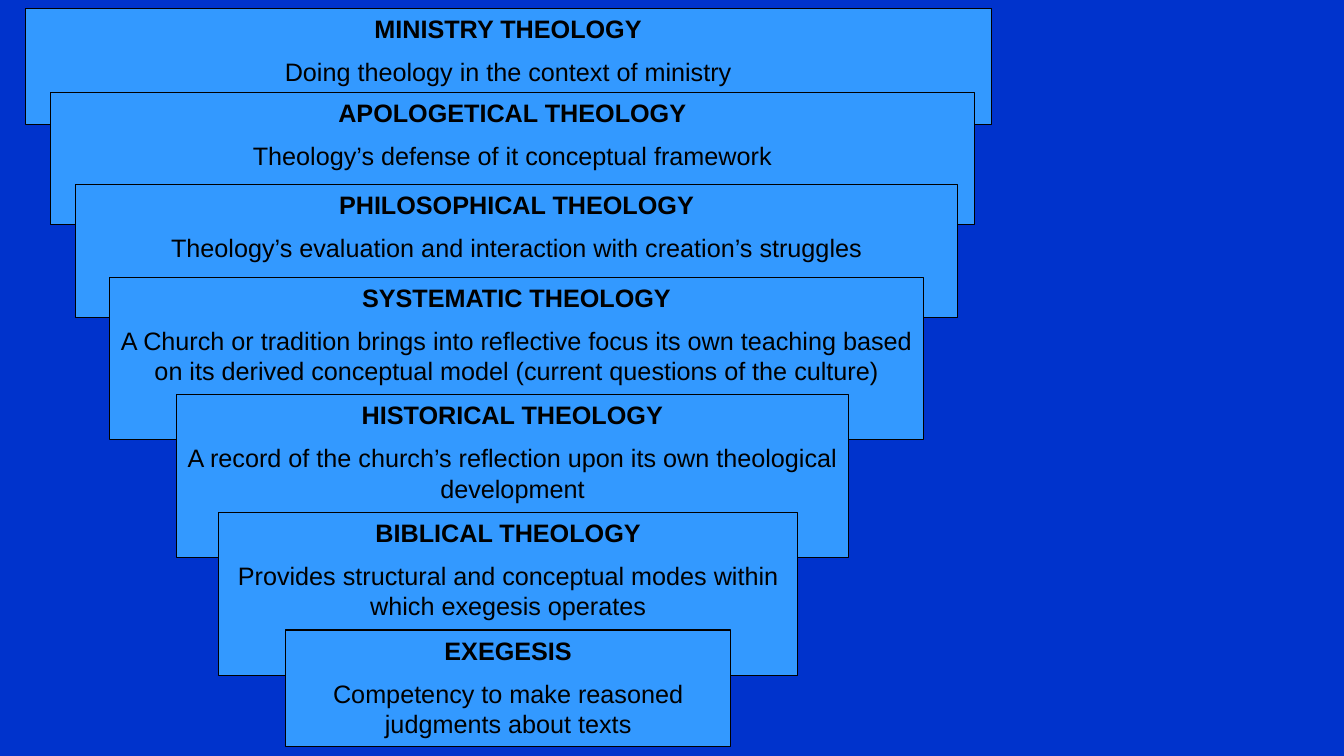
from pptx import Presentation
from pptx.dml.color import RGBColor
from pptx.enum.shapes import MSO_SHAPE
from pptx.enum.text import MSO_ANCHOR, PP_ALIGN
from pptx.util import Emu, Pt

COLORS = {"background": "0033CC", "box": "3399FF", "ink": "000000"}
FONT = {"name": "Arial", "size": Pt(18)}
FRAME = {"word_wrap": True, "vertical_anchor": MSO_ANCHOR.TOP}

LAYERS = [
    (24, 8, 920, 111, "MINISTRY THEOLOGY",
     "Doing theology in the context of ministry"),
    (48, 88, 880, 126, "APOLOGETICAL THEOLOGY",
     "Theology’s defense of it conceptual framework"),
    (72, 176, 840, 126, "PHILOSOPHICAL THEOLOGY",
     "Theology’s evaluation and interaction with creation’s struggles"),
    (104, 264, 776, 155, "SYSTEMATIC THEOLOGY",
     "A Church or tradition brings into reflective focus its own teaching "
     "based on its derived conceptual model (current questions of the culture)"),
    (168, 376, 640, 155, "HISTORICAL THEOLOGY",
     "A record of the church’s reflection upon its own theological development"),
    (208, 488, 552, 155, "BIBLICAL THEOLOGY",
     "Provides structural and conceptual modes within which exegesis operates"),
    (272, 600, 424, 111, "EXEGESIS",
     "Competency to make reasoned judgments about texts"),
]


def px(n):
    """Turn pixels into EMU."""
    return Emu(n * 9525)


def color(name):
    """Look up a named colour."""
    return RGBColor.from_string(COLORS[name])


def apply(target, values):
    """Set each attribute in values on target."""
    for key, value in values.items():
        setattr(target, key, value)


def fill(target, name):
    """Give target a solid fill."""
    target.fill.solid()
    target.fill.fore_color.rgb = color(name)


def add_text(p, text, bold, before):
    """Write one centred paragraph."""
    apply(p, {"alignment": PP_ALIGN.CENTER, "space_before": Pt(before)})
    r = p.add_run()
    r.text = text
    apply(r.font, {**FONT, "bold": bold})
    r.font.color.rgb = color("ink")


def add_layer(s, left, top, width, height, title, body):
    """Draw one box with its title and explanation."""
    sp = s.shapes.add_shape(MSO_SHAPE.RECTANGLE, *map(px, (left, top, width, height)))
    sp.shadow.inherit = False
    fill(sp, "box")
    sp.line.color.rgb = color("ink")
    sp.line.width = Pt(0.75)
    tf = sp.text_frame
    apply(tf, FRAME)
    add_text(tf.paragraphs[0], title, True, 0)
    add_text(tf.add_paragraph(), body, False, 9)


def main():
    """Build the slide and save it."""
    prs = Presentation()
    apply(prs, {"slide_width": px(1280), "slide_height": px(720)})
    s = prs.slides.add_slide(prs.slide_layouts[6])
    fill(s.background, "background")
    for layer in LAYERS:
        add_layer(s, *layer)
    prs.save("out.pptx")


if __name__ == "__main__":
    main()
